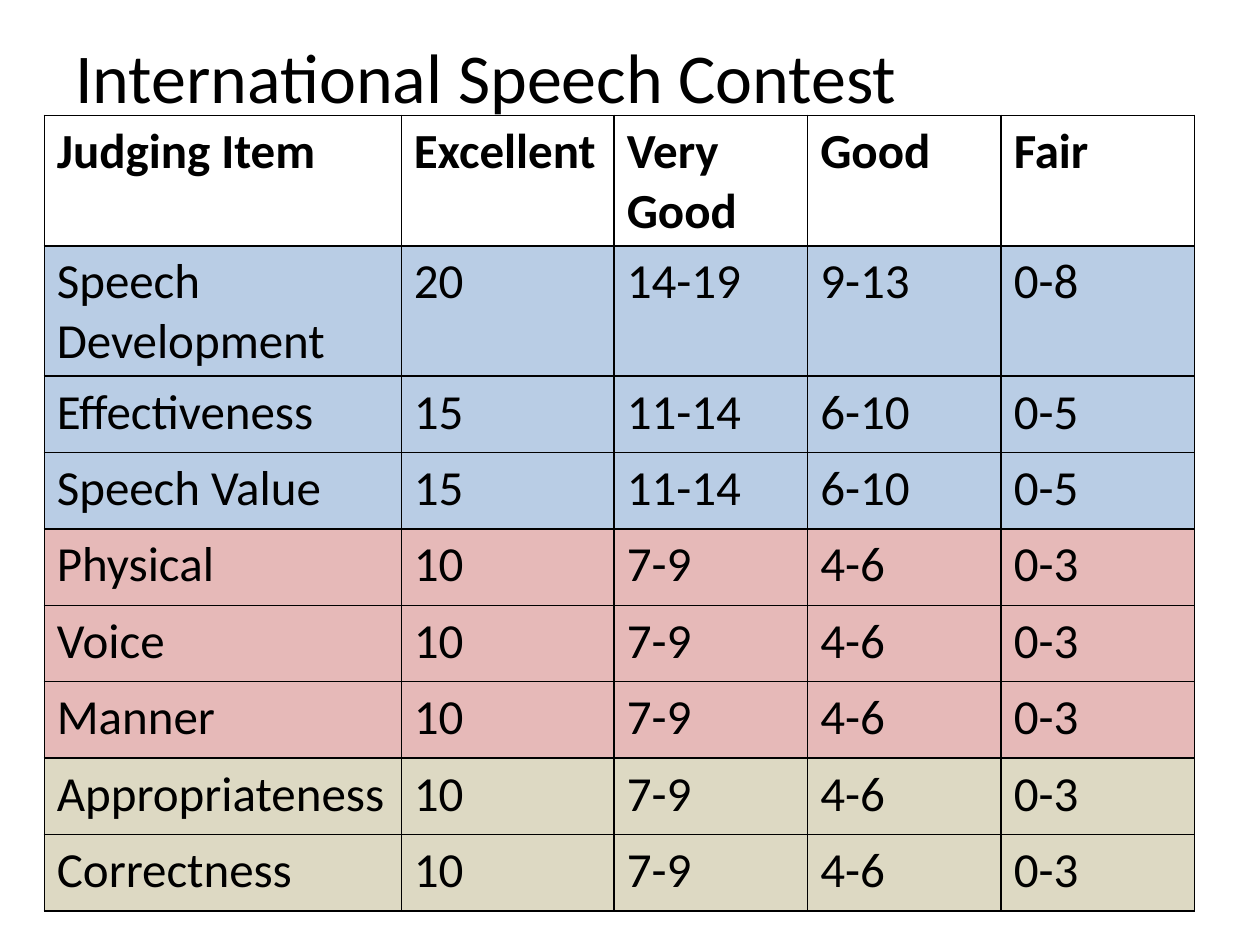
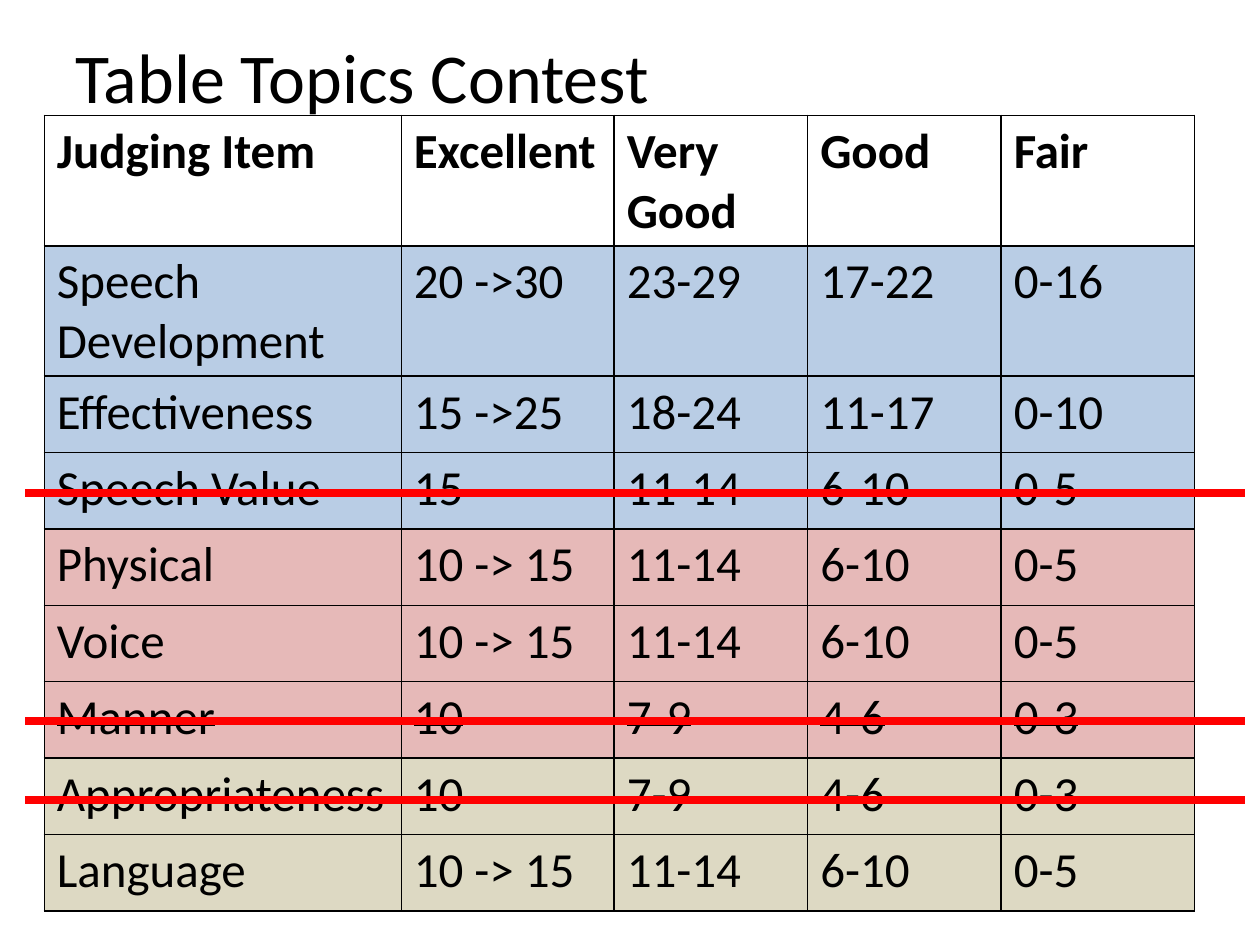
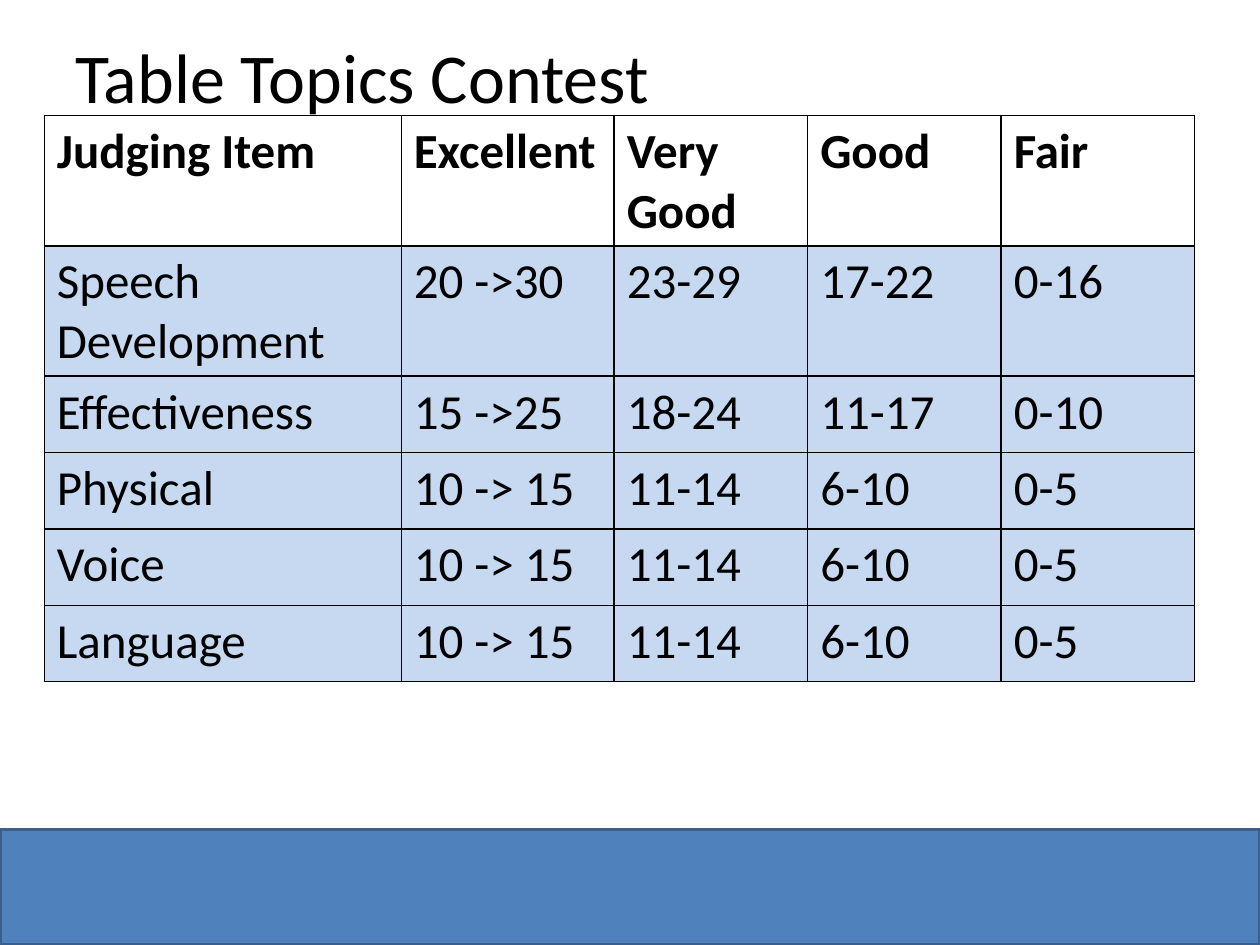
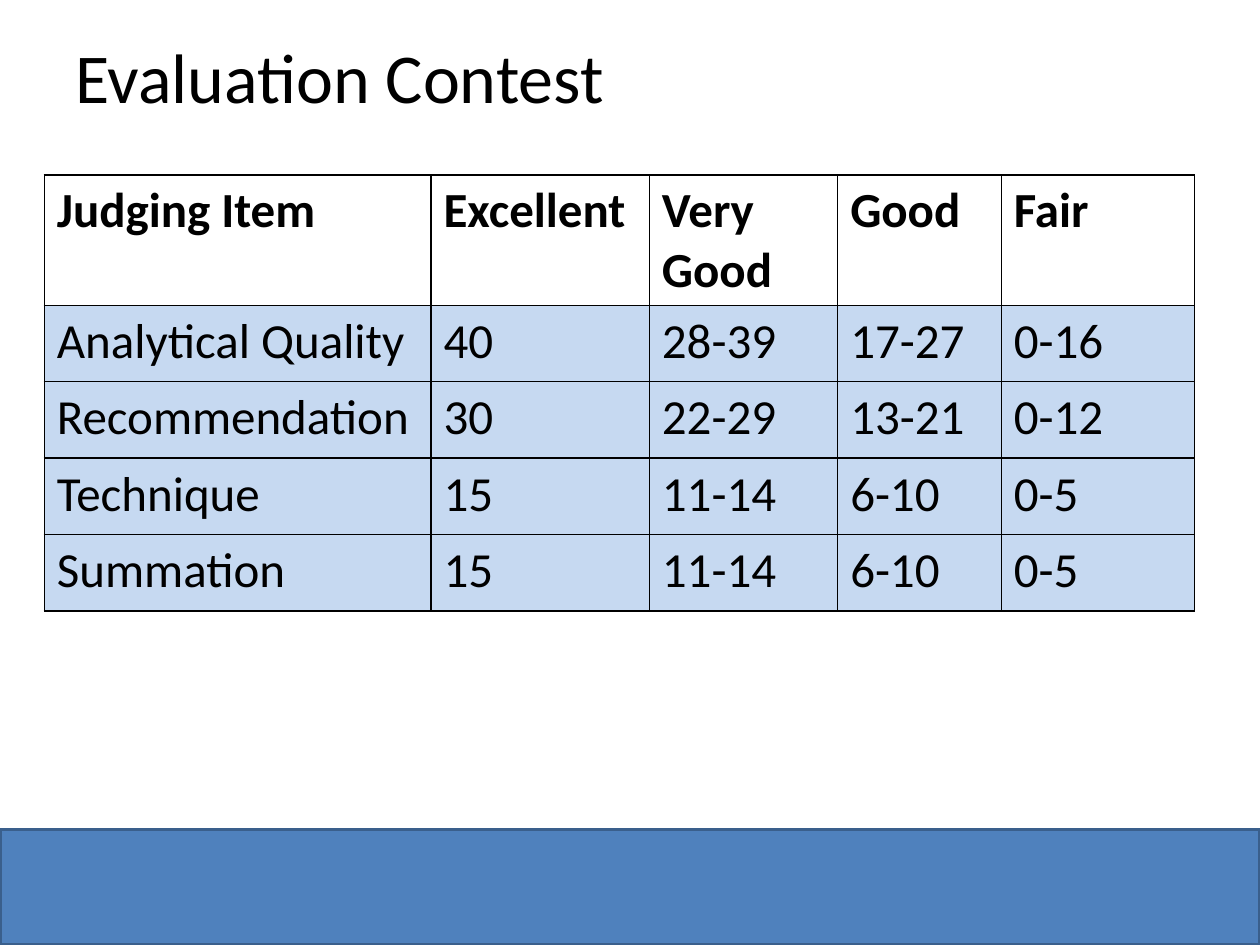
import pptx
import pptx.util
import pptx.dml.color
import pptx.enum.shapes
import pptx.enum.text
import pptx.oxml
import pptx.oxml.ns

Pt = pptx.util.Pt
RGBColor = pptx.dml.color.RGBColor

# Colours
BLACK = RGBColor(0x00, 0x00, 0x00)
BLUE = RGBColor(0xB9, 0xCD, 0xE5)
PINK = RGBColor(0xE6, 0xB9, 0xB8)
TAN = RGBColor(0xDD, 0xD9, 0xC3)
PALE = RGBColor(0xC6, 0xD9, 0xF1)
BAND = RGBColor(0x4F, 0x81, 0xBD)
EDGE = RGBColor(0x3A, 0x5F, 0x8C)
RED = RGBColor(0xFF, 0x00, 0x00)

# Text formats
TITLE = {"name": "Calibri", "size": Pt(40), "bold": False}
BODY = {"name": "Calibri", "size": Pt(28), "bold": False}
HEAD = {**BODY, "bold": True}

# Boxes as left, top, width, height in points
PAGE = (720, 540)
TOP_BOX = (36, 9.5, 648, 67.5)
FOOT_BOX = (0, 474, 720, 66)
GRID_BOX = (25.3, 66, 657.4)
LOW_BOX = (25.3, 100, 657.4)

# Column widths and row heights
WIDE = (204, 121.7, 110.57, 110.57, 110.56)
TIGHT = (221, 124.8, 107.6, 93.5, 110.5)
HEAD_H, ROW_H = 66, 43.68

# Scores: item, then the range for each grade
GRADES = ("Judging Item", "Excellent", "Very Good", "Good", "Fair")
TENS = ("10", "7-9", "4-6", "0-3")
TEENS = ("15", "11-14", "6-10", "0-5")
RAISED = ("10 -> 15",) + TEENS[1:]
SPEECH = [
    ("Speech Development", "20", "14-19", "9-13", "0-8"),
    ("Effectiveness",) + TEENS,
    ("Speech Value",) + TEENS,
] + [(item,) + TENS for item in
     ("Physical", "Voice", "Manner", "Appropriateness", "Correctness")]
TOPICS = [
    ("Speech Development", "20 ->30", "23-29", "17-22", "0-16"),
    ("Effectiveness", "15 ->25", "18-24", "11-17", "0-10"),
    ("Speech Value",) + TEENS,
    ("Physical",) + RAISED,
    ("Voice",) + RAISED,
    ("Manner",) + TENS,
    ("Appropriateness",) + TENS,
    ("Language",) + RAISED,
]
REVIEW = [
    ("Analytical Quality", "40", "28-39", "17-27", "0-16"),
    ("Recommendation", "30", "22-29", "13-21", "0-12"),
    ("Technique",) + TEENS,
    ("Summation",) + TEENS,
]
CUT = {"Speech Value", "Manner", "Appropriateness"}
KEPT = [row for row in TOPICS if row[0] not in CUT]
GROUPS = [BLUE] * 3 + [PINK] * 3 + [TAN] * 2
CUT_TOPS = (281.5, 411.8, 457.2)


def write(frame, text, style, cut=False):
    run = frame.paragraphs[0].add_run()
    run.text = text
    for key, value in style.items():
        setattr(run.font, key, value)
    run.font.color.rgb = BLACK
    if cut:
        run._r.get_or_add_rPr().set("strike", "sngStrike")


def add_title(slide, box, text):
    frame = slide.shapes.add_textbox(*map(Pt, box)).text_frame
    frame.word_wrap = True
    frame.vertical_anchor = pptx.enum.text.MSO_ANCHOR.MIDDLE
    write(frame, text, TITLE)


def add_band(slide, box):
    band = slide.shapes.add_shape(
        pptx.enum.shapes.MSO_SHAPE.RECTANGLE, *map(Pt, box))
    band.shadow.inherit = False
    band.fill.solid()
    band.fill.fore_color.rgb = BAND
    band.line.color.rgb = EDGE
    band.line.width = Pt(2)


def frame_cell(cell):
    # Thin black border on all four sides
    props = cell._tc.get_or_add_tcPr()
    for side in ("lnL", "lnR", "lnT", "lnB"):
        props.append(pptx.oxml.parse_xml(
            f'<a:{side} {pptx.oxml.ns.nsdecls("a")} w="{Pt(1)}"><a:solidFill>'
            f'<a:srgbClr val="{BLACK}"/></a:solidFill></a:{side}>'))


def add_grid(slide, box, widths, rows, fills, cuts=()):
    left, top, width = box
    high = HEAD_H + ROW_H * len(rows)
    grid = slide.shapes.add_table(
        len(rows) + 1, len(widths), Pt(left), Pt(top), Pt(width), Pt(high)).table
    grid.first_row = grid.horz_banding = False
    for col, size in zip(grid.columns, widths):
        col.width = Pt(size)
    lines = zip(grid.rows, [GRADES] + rows, [None] + fills)
    for place, (line, texts, fill) in enumerate(lines):
        line.height = Pt(ROW_H if place else HEAD_H)
        for cell, text in zip(line.cells, texts):
            frame_cell(cell)
            if fill is None:
                cell.fill.background()
            else:
                cell.fill.solid()
                cell.fill.fore_color.rgb = fill
            write(cell.text_frame, text, BODY if place else HEAD, texts[0] in cuts)


def add_cuts(slide, box, tops):
    # Red lines run a little past both sides of the table
    left, _, width = box
    for top in tops:
        line = slide.shapes.add_connector(
            pptx.enum.shapes.MSO_CONNECTOR.STRAIGHT,
            Pt(left - 11), Pt(top), Pt(left + width + 28.7), Pt(top))
        line.line.color.rgb = RED
        line.line.width = Pt(4.5)
        line._element.spPr.append(pptx.oxml.parse_xml(
            f'<a:effectLst {pptx.oxml.ns.nsdecls("a")}/>'))


def add_page(deck, title, rows, fills, box=GRID_BOX, widths=WIDE, cuts=(), band=False):
    slide = deck.slides.add_slide(deck.slide_layouts[6])
    if band:
        add_band(slide, FOOT_BOX)
    add_title(slide, TOP_BOX, title)
    add_grid(slide, box, widths, rows, fills, cuts)
    if cuts:
        add_cuts(slide, box, CUT_TOPS)


def main():
    deck = pptx.Presentation()
    deck.slide_width, deck.slide_height = map(Pt, PAGE)
    add_page(deck, "International Speech Contest", SPEECH, GROUPS)
    add_page(deck, "Table Topics Contest", TOPICS, GROUPS, cuts=CUT)
    add_page(deck, "Table Topics Contest", KEPT, [PALE] * len(KEPT), band=True)
    add_page(deck, "Evaluation Contest", REVIEW, [PALE] * len(REVIEW),
             LOW_BOX, TIGHT, band=True)
    deck.save("out.pptx")


if __name__ == "__main__":
    main()
